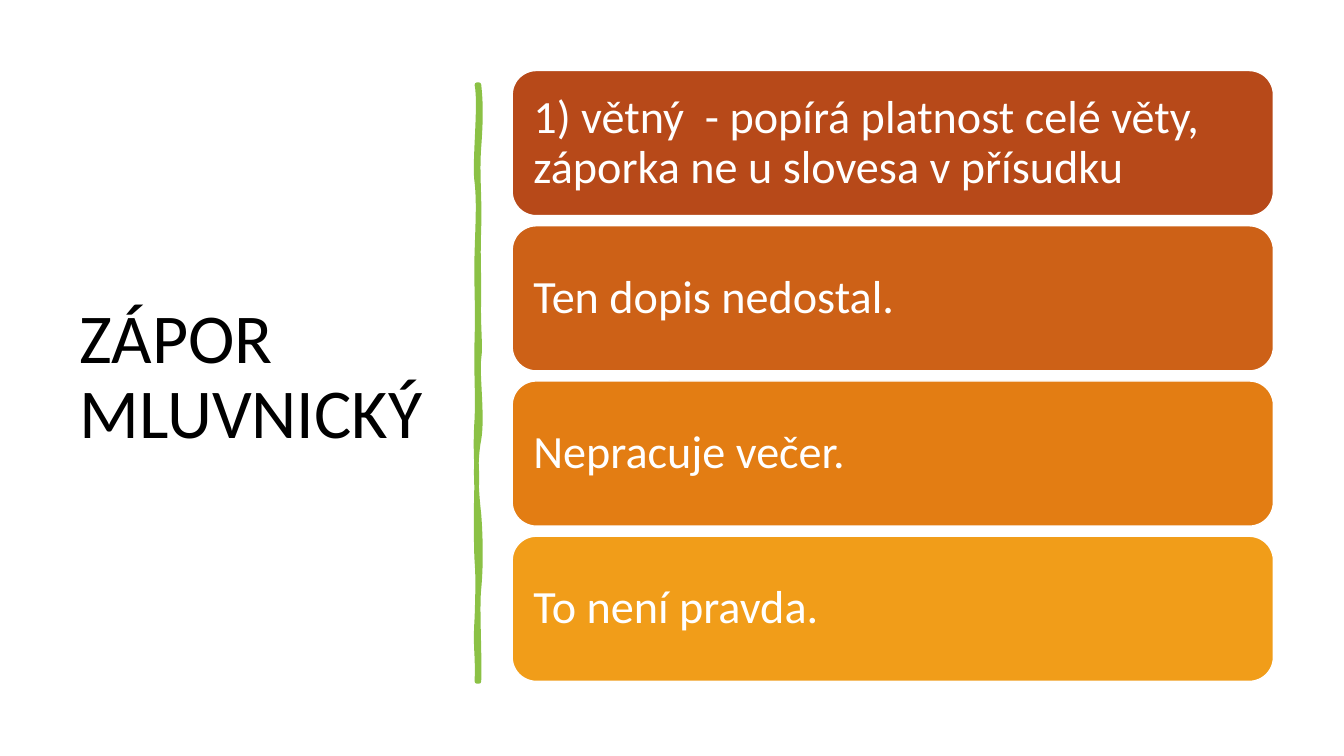
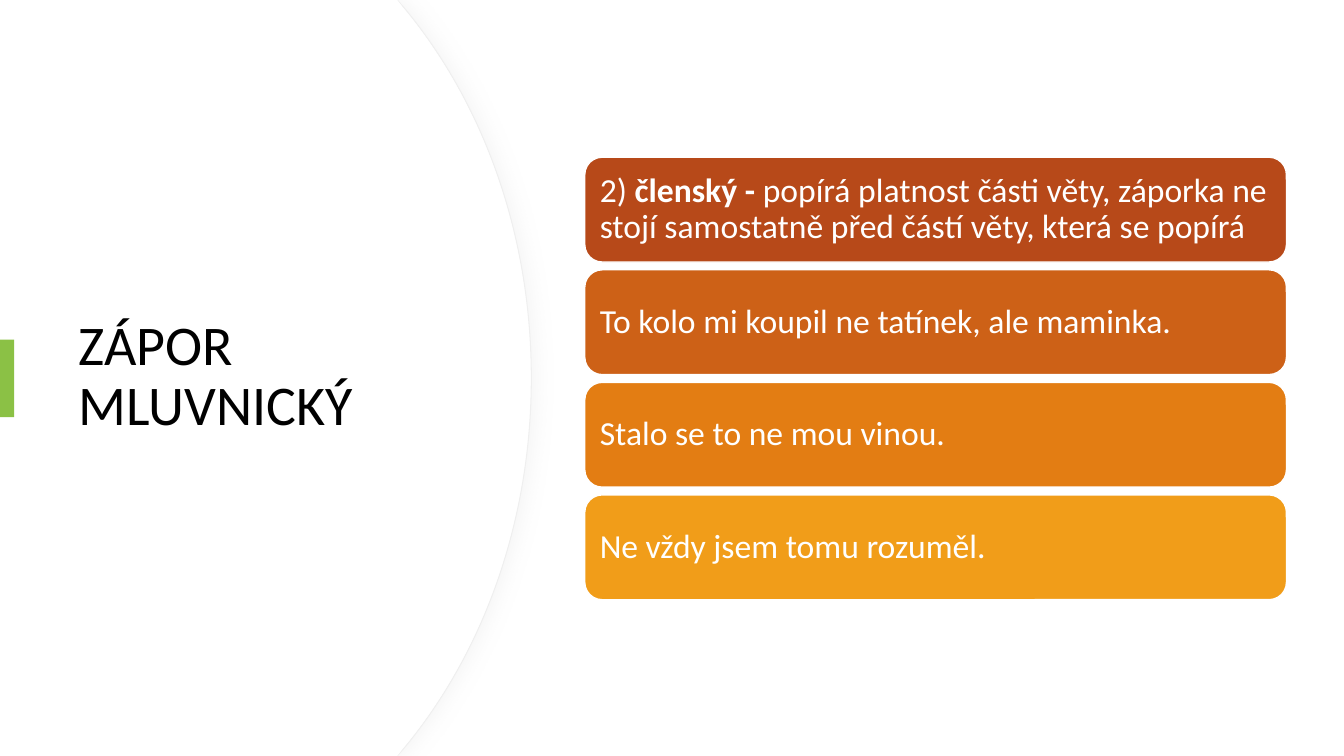
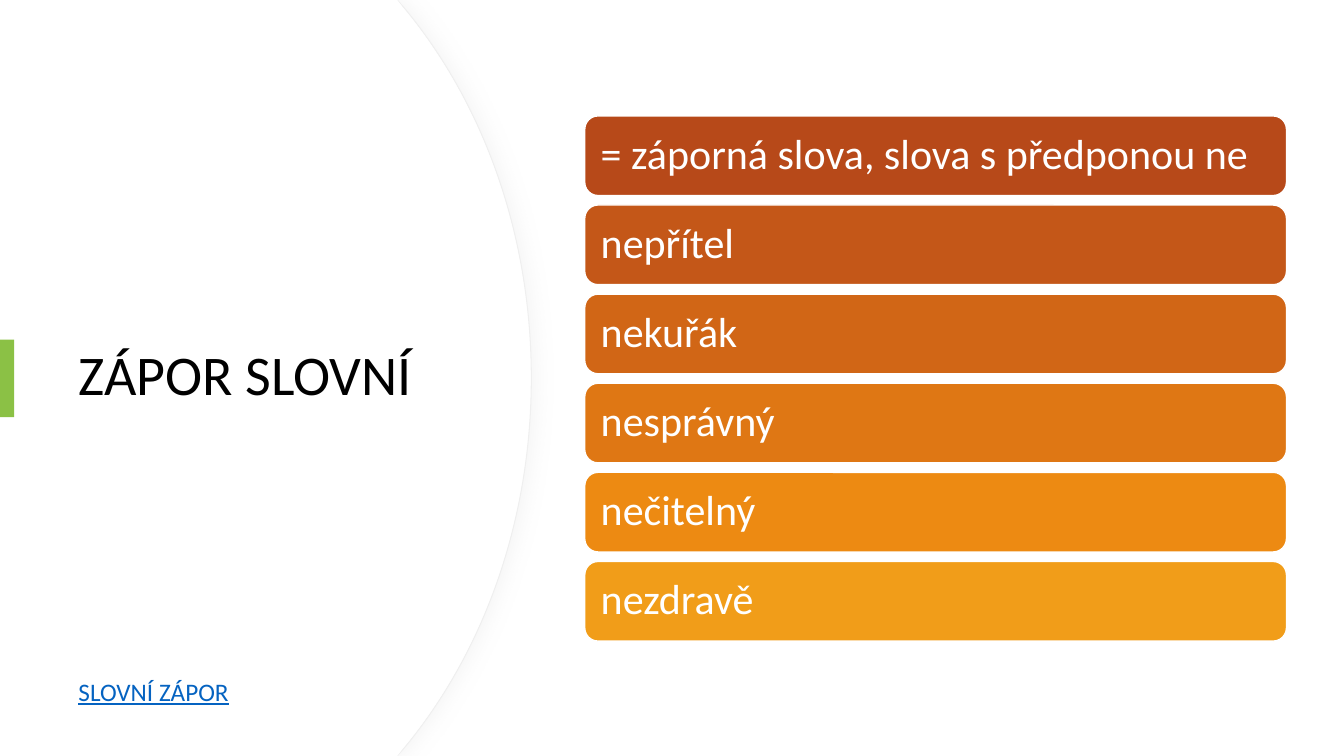
from dataclasses import dataclass

from lxml import etree
from pptx import Presentation
from pptx import util as u
from pptx.dml import color
from pptx.enum import shapes, text
from pptx.oxml import ns


@dataclass(frozen=True)
class Theme:
    font: str = "Calibri"
    white: str = "FFFFFF"
    ink: str = "000000"
    accent: str = "8BC145"
    link: str = "0563C1"
    rim: str = "EFEFEF"
    shade: str = "D9D9D9"
    four_bars: tuple = ("B74919", "CD6117", "E37D13", "F19D19")
    six_bars: tuple = ("B74919", "C45718", "D16616", "DF7714", "ED8A12", "F19D19")
    large_title: int = 50
    title: int = 40
    link_size: int = 18


THEME = Theme()
PAGE_WIDTH, PAGE_HEIGHT = 13.33, 7.5

BRUSH_START = (4.75, 0.84)
BRUSH_CURVES = [
    ((4.77, 1.02), (4.77, 1.19), (4.75, 1.46)),
    ((4.73, 1.73), (4.76, 1.95), (4.75, 2.26)),
    ((4.74, 2.57), (4.75, 2.62), (4.75, 2.94)),
    ((4.74, 3.25), (4.77, 3.42), (4.75, 3.56)),
    ((4.73, 3.7), (4.79, 4.14), (4.75, 4.36)),
    ((4.71, 4.57), (4.72, 4.84), (4.75, 5.1)),
    ((4.77, 5.36), (4.77, 5.64), (4.75, 5.84)),
    ((4.73, 6.03), (4.76, 6.5), (4.75, 6.76)),
    ((4.74, 6.76), (4.73, 6.76), (4.73, 6.76)),
    ((4.74, 6.46), (4.71, 6.44), (4.73, 6.13)),
    ((4.74, 5.83), (4.74, 5.7), (4.73, 5.57)),
    ((4.72, 5.44), (4.72, 4.95), (4.73, 4.77)),
    ((4.73, 4.59), (4.71, 4.45), (4.73, 4.15)),
    ((4.74, 3.86), (4.72, 3.73), (4.73, 3.35)),
    ((4.74, 2.98), (4.72, 2.81), (4.73, 2.5)),
    ((4.74, 2.18), (4.75, 2), (4.73, 1.81)),
    ((4.7, 1.63), (4.77, 1.04), (4.73, 0.84)),
]


def rgb(value):
    return color.RGBColor.from_string(value)


def paint(shape, fill, line=None, width=1):
    shape.shadow.inherit = False
    shape.fill.solid()
    shape.fill.fore_color.rgb = rgb(fill)
    if line:
        shape.line.color.rgb = rgb(line)
        shape.line.width = u.Pt(width)
    else:
        shape.line.fill.background()


def bend(shape, segment, controls):
    segment.tag = ns.qn("a:cubicBezTo")
    for index, (x, y) in enumerate(controls):
        point = etree.Element(
            ns.qn("a:pt"), x=str(u.Inches(x) - shape.left), y=str(u.Inches(y) - shape.top))
        segment.insert(index, point)


def add_outline(page, start, segments):
    builder = page.shapes.build_freeform(*map(u.Inches, start))
    builder.add_line_segments(
        [tuple(map(u.Inches, segment[-1])) for segment in segments], close=True)
    shape = builder.convert_to_shape()
    drawn = list(shape._element.spPr.iter(ns.qn("a:lnTo")))
    for element, (*controls, _) in zip(drawn, segments):
        if controls:
            bend(shape, element, controls)
    return shape


def write(shape, spans, size, ink, inset=None, anchor=text.MSO_ANCHOR.MIDDLE, spacing=0.9):
    frame = shape.text_frame
    frame.word_wrap = True
    frame.vertical_anchor = anchor
    if inset is not None:
        frame.margin_left = frame.margin_right = u.Inches(inset)
        frame.margin_top = frame.margin_bottom = u.Inches(inset)
    para = frame.paragraphs[0]
    para.alignment = text.PP_ALIGN.LEFT
    para.line_spacing = spacing
    para.font.name = THEME.font
    para.font.size = u.Pt(size)
    para.font.color.rgb = rgb(ink)
    for content, bold in spans:
        span = para.add_run()
        span.text = content
        if bold:
            span.font.bold = True
    return para


def add_title(page, title, place, size):
    box = page.shapes.add_textbox(*map(u.Inches, place))
    write(box, [(title, False)], size, THEME.ink)


def add_bars(page, items, colors, left, width, top, bottom, height, size, inset):
    pitch = (bottom - top - height) / (len(items) - 1)
    for index, (item, fill) in enumerate(zip(items, colors)):
        bar = page.shapes.add_shape(
            shapes.MSO_SHAPE.ROUNDED_RECTANGLE, u.Inches(left),
            u.Inches(top + index * pitch), u.Inches(width), u.Inches(height))
        paint(bar, fill, THEME.white)
        spans = [(item, False)] if isinstance(item, str) else item
        write(bar, spans, size, THEME.white, inset)


def add_brush(page):
    brush = add_outline(page, BRUSH_START, BRUSH_CURVES)
    paint(brush, THEME.accent, THEME.accent, 3.25)
    line = brush._element.spPr.find(ns.qn("a:ln"))
    etree.SubElement(line, ns.qn("a:round"))


def add_soft_shadow(shape):
    effects = shape._element.spPr.find(ns.qn("a:effectLst"))
    shadow = etree.SubElement(
        effects, ns.qn("a:outerShdw"), blurRad=str(u.Pt(14)), dist=str(u.Pt(3)),
        dir="0", algn="l", rotWithShape="0")
    shade = etree.SubElement(shadow, ns.qn("a:srgbClr"), val=THEME.shade)
    etree.SubElement(shade, ns.qn("a:alpha"), val="25000")


def add_round_panel(page, reach):
    middle = PAGE_HEIGHT / 2
    shoulder, bulge = reach - 1.26, reach - 0.48
    return add_outline(page, (0, 0), [
        ((3.94, 0),),
        ((shoulder, 0.08),),
        ((bulge, 1.02), (reach, 2.32), (reach, middle)),
        ((reach, 5.18), (bulge, 6.48), (shoulder, 7.42)),
        ((3.94, PAGE_HEIGHT),),
        ((0, PAGE_HEIGHT),),
    ])


def add_panel_page(deck, title):
    page = add_page(deck)
    rim = add_round_panel(page, 5.27)
    paint(rim, THEME.white, THEME.rim, 0.75)
    add_soft_shadow(rim)
    paint(add_round_panel(page, 5.26), THEME.white)
    add_title(page, title, (0.68, 1.27, 3.94, 4.95), THEME.title)
    tab = page.shapes.add_shape(
        shapes.MSO_SHAPE.RECTANGLE, 0, u.Inches(3.37), u.Inches(0.14), u.Inches(0.77))
    paint(tab, THEME.accent)
    return page


def add_page(deck):
    return deck.slides.add_slide(deck.slide_layouts[6])


def add_sentence_negation(deck):
    page = add_page(deck)
    add_title(page, "ZÁPOR MLUVNICKÝ", (0.69, 0.7, 3.74, 6.11), THEME.large_title)
    add_brush(page)
    add_bars(page, [
        "1) větný  - popírá platnost celé věty, záporka ne u slovesa v přísudku",
        "Ten dopis nedostal.",
        "Nepracuje večer.",
        "To není pravda.",
    ], THEME.four_bars, left=5.08, width=7.55, top=0.7, bottom=6.76,
        height=1.44, size=33, inset=0.14)


def add_member_negation(deck):
    page = add_panel_page(deck, "ZÁPOR MLUVNICKÝ")
    add_bars(page, [
        [("2) ", False), ("členský - ", True),
         ("popírá platnost části věty, záporka ne stojí samostatně "
          "před částí věty, která se popírá", False)],
        "To kolo mi koupil ne tatínek, ale maminka.",
        "Stalo se to ne mou vinou.",
        "Ne vždy jsem tomu rozuměl.",
    ], THEME.four_bars, left=5.8, width=6.96, top=1.56, bottom=5.95,
        height=1.04, size=24, inset=0.1)


def add_word_negation(deck):
    page = add_panel_page(deck, "ZÁPOR SLOVNÍ")
    add_bars(page, [
        "= záporná slova, slova s předponou ne",
        "nepřítel", "nekuřák", "nesprávný", "nečitelný", "nezdravě",
    ], THEME.six_bars, left=5.8, width=6.96, top=1.15, bottom=6.36,
        height=0.79, size=30, inset=0.12)
    box = page.shapes.add_textbox(*map(u.Inches, (0.68, 6.66, 6.69, 0.4)))
    para = write(box, [("SLOVNÍ ZÁPOR", False)], THEME.link_size, THEME.link,
                 anchor=text.MSO_ANCHOR.TOP, spacing=1.0)
    para.font.underline = True


def main():
    deck = Presentation()
    deck.slide_width = u.Inches(PAGE_WIDTH)
    deck.slide_height = u.Inches(PAGE_HEIGHT)
    add_sentence_negation(deck)
    add_member_negation(deck)
    add_word_negation(deck)
    deck.save("out.pptx")


if __name__ == "__main__":
    main()
